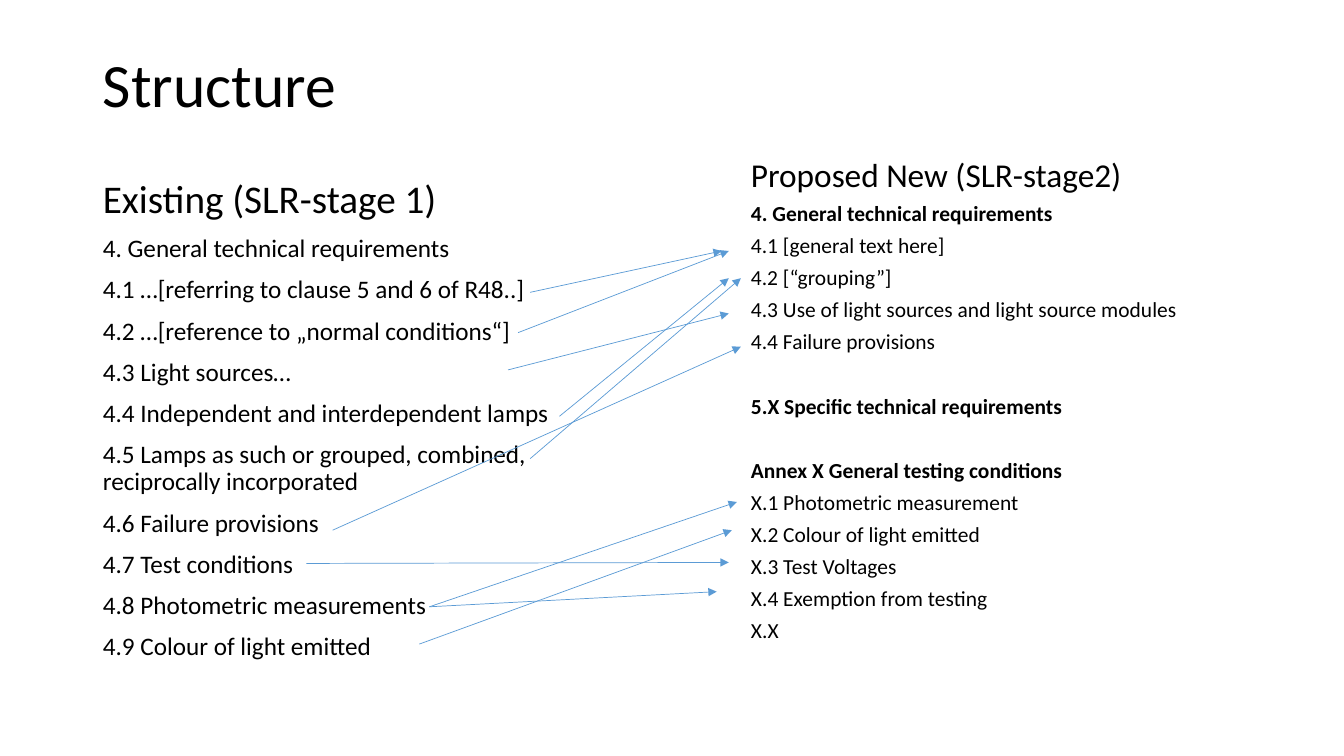
from dataclasses import dataclass

from lxml.etree import SubElement
from pptx import Presentation
from pptx.dml.color import RGBColor
from pptx.enum.shapes import MSO_CONNECTOR
from pptx.enum.text import MSO_ANCHOR, MSO_AUTO_SIZE, PP_ALIGN
from pptx.oxml.ns import qn
from pptx.util import Pt

PX = 9144  # EMU in one px, 100 px to the inch


@dataclass(frozen=True)
class Theme:
    font: str = "Calibri"
    ink: RGBColor = RGBColor(0x00, 0x00, 0x00)
    blue: RGBColor = RGBColor(0x5B, 0x9B, 0xD5)
    title: float = 44
    old: tuple = (28, 18)
    new: tuple = (23.8, 15.3)
    rule: float = 0.5
    gap: float = 10
    wide: float = 33


THEME = Theme()

OLD = [
    "Existing (SLR-stage 1)",
    "4. General technical requirements",
    "4.1 …[referring to clause 5 and 6 of R48..]",
    "4.2 …[reference to „normal conditions“]",
    "4.3 Light sources…",
    "4.4 Independent and interdependent lamps",
    "4.5 Lamps as such or grouped, combined, reciprocally incorporated",
    "4.6 Failure provisions",
    "4.7 Test conditions",
    "4.8 Photometric measurements",
    "4.9 Colour of light emitted",
]
NEW = [
    "Proposed New (SLR-stage2)",
    "4. General technical requirements",
    "4.1 [general text here]",
    "4.2 [“grouping”]",
    "4.3 Use of light sources and light source modules",
    "4.4 Failure provisions",
    "5.X Specific technical requirements",
    "Annex X General testing conditions",
    "X.1 Photometric measurement",
    "X.2 Colour of light emitted",
    "X.3 Test Voltages",
    "X.4 Exemption from testing",
    "X.X",
]
BOLD = {1, 6, 7}   # headings in NEW
APART = {6, 7}     # headings that open a new block

# Start x, y and end x, y of each arrow
ARROWS = [
    (526, 290, 716, 249),
    (514, 330, 723, 249),
    (555, 413, 723, 276),
    (526, 455, 735, 276),
    (330, 526, 735, 344),
    (304, 559, 723, 558),
    (426, 602, 731, 498),
    (416, 639, 726, 526),
    (504, 367, 723, 311),
    (426, 602, 711, 587),
]


def place(shape, x, y, w, h, anchor):
    shape.left, shape.top = x * PX, y * PX
    shape.width, shape.height = w * PX, h * PX
    frame = shape.text_frame
    frame.word_wrap = True
    frame.auto_size = MSO_AUTO_SIZE.NONE
    frame.vertical_anchor = anchor
    return frame


def style(para, size, bold=False):
    para.alignment = PP_ALIGN.LEFT
    font = para.font
    font.name, font.size, font.bold = THEME.font, Pt(size), bold
    font.color.rgb = THEME.ink


def add_title(shape, text):
    frame = place(shape, 92, 14, 1150, 145, MSO_ANCHOR.MIDDLE)
    frame.text = text
    para = frame.paragraphs[0]
    para.line_spacing = 0.9
    style(para, THEME.title)


def add_list(shape, x, y, lines, sizes, pitch, bold=(), apart=()):
    """Fill a body with a heading and unbulleted lines."""
    frame = place(shape, x, y, 538, 502, MSO_ANCHOR.TOP)
    frame.text = "\n".join(lines)
    for i, para in enumerate(frame.paragraphs):
        para.line_spacing = pitch
        para.space_before = Pt(THEME.wide if i in apart else THEME.gap)
        props = para._p.get_or_add_pPr()
        props.set("marL", "0")
        props.set("indent", "0")
        SubElement(props, qn("a:buNone"))
        style(para, sizes[min(i, 1)], i in bold)


def add_arrow(slide, ends):
    arrow = slide.shapes.add_connector(
        MSO_CONNECTOR.STRAIGHT, *(n * PX for n in ends))
    arrow.line.color.rgb = THEME.blue
    arrow.line.width = Pt(THEME.rule)
    SubElement(arrow.line._get_or_add_ln(), qn("a:tailEnd"), type="triangle")
    SubElement(arrow._element.spPr, qn("a:effectLst"))


def main():
    deck = Presentation()
    deck.slide_width, deck.slide_height = 12192000, 6858000
    slide = deck.slides.add_slide(deck.slide_layouts[3])
    title, left, right = slide.placeholders
    add_title(title, "Structure")
    add_list(left, 92, 173, OLD, THEME.old, 0.9)
    add_list(right, 735, 159, NEW, THEME.new, 0.7, BOLD, APART)
    for ends in ARROWS:
        add_arrow(slide, ends)
    deck.save("out.pptx")


if __name__ == "__main__":
    main()
